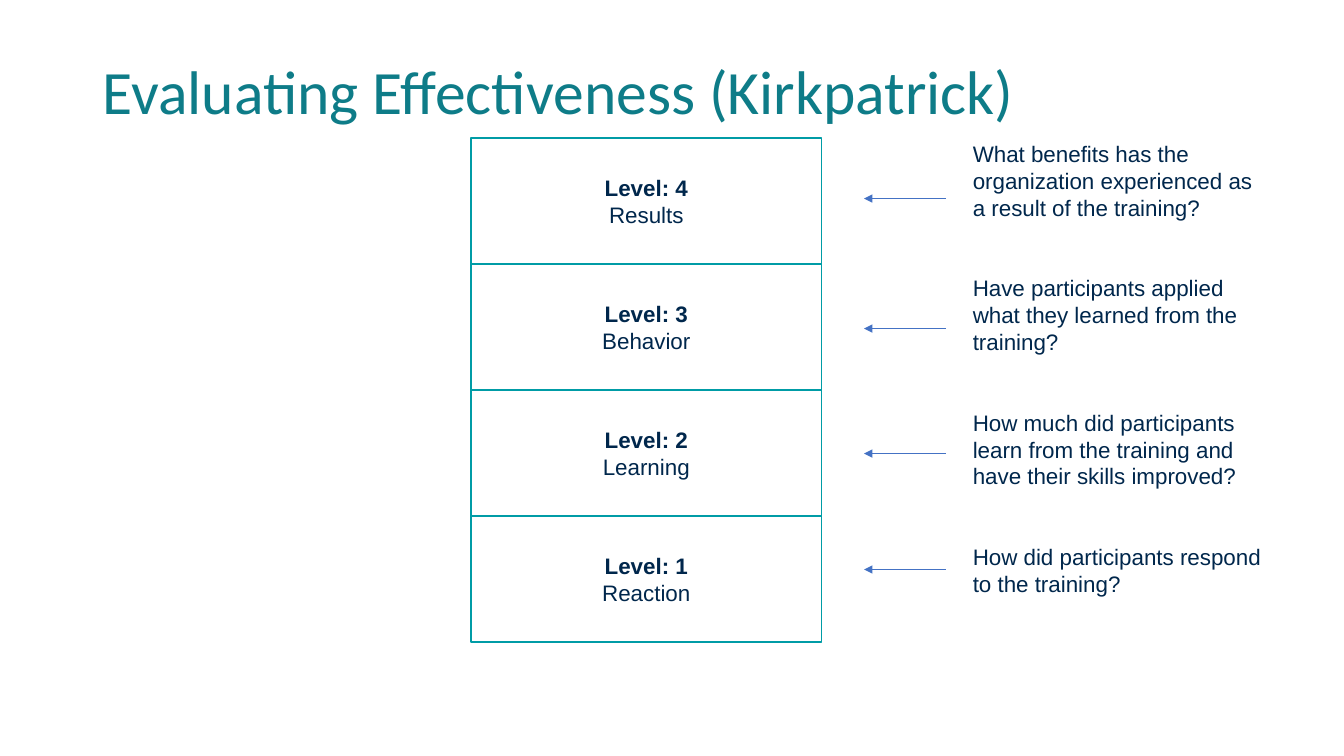
from dataclasses import dataclass

from pptx import Presentation
from pptx.dml.color import RGBColor
from pptx.enum.shapes import MSO_CONNECTOR as Connector, MSO_SHAPE as Shape
from pptx.enum.text import MSO_ANCHOR as Anchor, PP_ALIGN as Align
from pptx.oxml.ns import qn
from pptx.slide import Slide
from pptx.text.text import TextFrame, _Paragraph as Paragraph
from pptx.util import Inches, Pt
from lxml.etree import SubElement


@dataclass(frozen=True)
class Theme:
    """Colours, fonts and type sizes of the slide."""
    title: RGBColor = RGBColor(0x0E, 0x7C, 0x88)
    text: RGBColor = RGBColor(0x00, 0x27, 0x4C)
    border: RGBColor = RGBColor(0x00, 0x9C, 0xA6)
    arrow: RGBColor = RGBColor(0x44, 0x72, 0xC4)
    title_font: str = "Calibri"
    body_font: str = "Arial"
    title_size: int = 44
    body_size: int = 16
    line_width: int = 1


@dataclass(frozen=True)
class Level:
    """One evaluation level with its question and arrow height."""
    number: int
    outcome: str
    question: str
    arrow_y: float


THEME = Theme()
LEVELS = [
    Level(4, "Results", "What benefits has the organization experienced as a result of the training?", 1.97),
    Level(3, "Behavior", "Have participants applied what they learned from the training?", 3.26),
    Level(2, "Learning", "How much did participants learn from the training and have their skills improved?", 4.5),
    Level(1, "Reaction", "How did participants respond to the training?", 5.65),
]
STACK_LEFT, STACK_TOP, LEVEL_WIDTH, LEVEL_HEIGHT = 4.67, 1.37, 3.48, 1.25
ARROW_START, ARROW_END = 9.38, 8.57
QUESTION_GAP = Pt(38.4)
TITLE_FORMAT = {"name": THEME.title_font, "size": Pt(THEME.title_size)}
BODY_FORMAT = {"name": THEME.body_font, "size": Pt(THEME.body_size)}


def set_attributes(target: object, values: dict) -> None:
    """Set each named attribute on the target."""
    for name, value in values.items():
        setattr(target, name, value)


def write(paragraph: Paragraph, wording: str, color: RGBColor, font_format: dict) -> None:
    """Add one formatted run to a paragraph."""
    run = paragraph.add_run()
    run.text = wording
    set_attributes(run.font, font_format)
    run.font.color.rgb = color


def add_text_area(slide: Slide, left: float, top: float, width: float, height: float) -> TextFrame:
    """Add a wrapping text box and return its frame."""
    area = slide.shapes.add_textbox(Inches(left), Inches(top), Inches(width), Inches(height))
    area.text_frame.word_wrap = True
    return area.text_frame


def add_title(slide: Slide) -> None:
    """Add the slide heading."""
    heading = add_text_area(slide, 0.92, 0.21, 11.5, 1.45)
    heading.vertical_anchor = Anchor.MIDDLE
    heading.paragraphs[0].line_spacing = 0.9
    write(heading.paragraphs[0], "Evaluating Effectiveness (Kirkpatrick)", THEME.title, TITLE_FORMAT)


def add_questions(slide: Slide) -> None:
    """Add the evaluation questions as spaced paragraphs."""
    questions = add_text_area(slide, 9.55, 1.34, 3.06, 5.2)
    for index, level in enumerate(LEVELS):
        paragraph = questions.add_paragraph() if index else questions.paragraphs[0]
        if index:
            paragraph.space_before = QUESTION_GAP
        write(paragraph, level.question, THEME.text, BODY_FORMAT)


def add_level(slide: Slide, level: Level, top: float) -> None:
    """Add the outlined block of one level."""
    block = slide.shapes.add_shape(
        Shape.RECTANGLE, Inches(STACK_LEFT), Inches(top), Inches(LEVEL_WIDTH), Inches(LEVEL_HEIGHT))
    block.shadow.inherit = False
    block.fill.background()
    block.line.color.rgb = THEME.border
    block.line.width = Pt(THEME.line_width)
    frame = block.text_frame
    set_attributes(frame, {
        "word_wrap": True, "vertical_anchor": Anchor.MIDDLE,
        "margin_left": Inches(1.22), "margin_right": Inches(1.22),
        "margin_top": Inches(0.03), "margin_bottom": Inches(0.03),
    })
    label, outcome = frame.paragraphs[0], frame.add_paragraph()
    for paragraph, wording, bold in ((label, f"Level: {level.number}", True), (outcome, level.outcome, False)):
        paragraph.alignment = Align.CENTER
        write(paragraph, wording, THEME.text, BODY_FORMAT | {"bold": bold})


def add_arrow(slide: Slide, y: float) -> None:
    """Add an arrow pointing from a question to its level."""
    arrow = slide.shapes.add_connector(
        Connector.STRAIGHT, Inches(ARROW_START), Inches(y), Inches(ARROW_END), Inches(y))
    arrow.line.color.rgb = THEME.arrow
    arrow.line.width = Pt(THEME.line_width)
    SubElement(arrow.line._get_or_add_ln(), qn("a:tailEnd"), type="triangle")
    SubElement(arrow._element.spPr, qn("a:effectLst"))


def main() -> None:
    """Build and save the slide."""
    presentation = Presentation()
    set_attributes(presentation, {"slide_width": Inches(13.33), "slide_height": Inches(7.5)})
    slide = presentation.slides.add_slide(presentation.slide_layouts[6])
    add_title(slide)
    add_questions(slide)
    for index, level in enumerate(LEVELS):
        add_level(slide, level, STACK_TOP + index * LEVEL_HEIGHT)
        add_arrow(slide, level.arrow_y)
    presentation.save("out.pptx")


if __name__ == "__main__":
    main()
